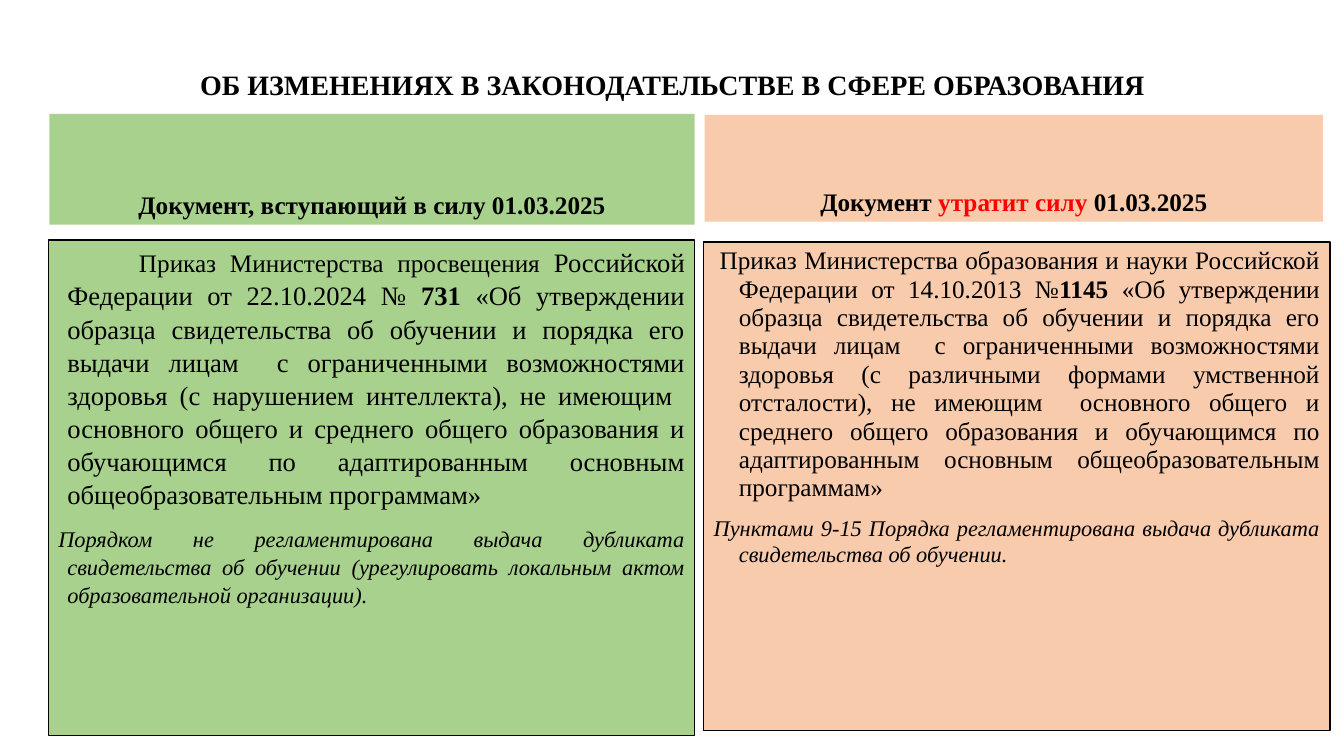
import pptx
import pptx.dml.color
import pptx.enum.shapes
import pptx.enum.text
import pptx.util
from dataclasses import dataclass

Inches, Pt = pptx.util.Inches, pptx.util.Pt
Color = pptx.dml.color.RGBColor.from_string
Align, Anchor = pptx.enum.text.PP_ALIGN, pptx.enum.text.MSO_ANCHOR


@dataclass(frozen=True)
class Theme:
    font: str = "Times New Roman"
    ink: str = "000000"
    alert: str = "FF0000"
    green: str = "A9D18E"
    peach: str = "F8CBAD"
    title: float = 20
    head: float = 18
    large: float = 19
    note: float = 16


THEME = Theme()


def write(para, runs, **style):
    """Fill a paragraph with (text, font values) runs."""
    for name, value in style.items():
        setattr(para, name, value)
    for text, look in runs:
        run = para.add_run()
        run.text = text
        values = {"name": THEME.font, "size": THEME.head, "color": THEME.ink} | look
        run.font.color.rgb = Color(values.pop("color"))
        values["size"] = Pt(values["size"])
        for name, value in values.items():
            setattr(run.font, name, value)


def indent(para, left, first):
    props = para._p.get_or_add_pPr()
    props.set("marL", str(Inches(left)))
    props.set("indent", str(Inches(first)))


def panel(slide, box, fill, anchor, border=False):
    """Draw a filled rectangle and return its text frame."""
    shape = slide.shapes.add_shape(
        pptx.enum.shapes.MSO_SHAPE.RECTANGLE, *map(Inches, box))
    shape.shadow.inherit = False
    shape.fill.solid()
    shape.fill.fore_color.rgb = Color(fill)
    if border:
        shape.line.color.rgb = Color(THEME.ink)
        shape.line.width = Pt(1)
    else:
        shape.line.fill.background()
    frame = shape.text_frame
    frame.word_wrap = True
    frame.vertical_anchor = anchor
    return frame


def title(slide, box, text):
    frame = slide.shapes.add_textbox(*map(Inches, box)).text_frame
    frame.word_wrap = True
    frame.vertical_anchor = Anchor.MIDDLE
    write(frame.paragraphs[0], [(text, {"size": THEME.title, "bold": True})],
          alignment=Align.CENTER, line_spacing=0.9)


def header(slide, box, fill, runs, spacing):
    frame = panel(slide, box, fill, Anchor.BOTTOM)
    write(frame.paragraphs[0], [(text, {"bold": True} | look) for text, look in runs],
          alignment=Align.CENTER, line_spacing=spacing, space_before=Pt(10))


def body(slide, box, fill, order, note, left, firsts, spacing):
    """Place the order and its italic note, each with its own first-line indent."""
    frame = panel(slide, box, fill, Anchor.TOP, border=True)
    paras = [frame.paragraphs[0], frame.add_paragraph()]
    texts = [order, [(note, {"size": THEME.note, "italic": True})]]
    for para, runs, first in zip(paras, texts, firsts):
        write(para, runs, alignment=Align.JUSTIFY, line_spacing=spacing,
              space_before=Pt(10))
        indent(para, left, first)


def order(start, number, kind, size):
    """Build the order's wording around its number and the kind of impairment."""
    look = {"size": size}
    return start + [
        (number, look | {"bold": True}),
        (" «Об утверждении образца свидетельства об обучении и порядка его выдачи "
         f"лицам  с ограниченными возможностями здоровья (с {kind}), не имеющим  "
         "основного общего и среднего общего образования и обучающимся по "
         "адаптированным основным общеобразовательным программам»", look),
    ]


def main():
    deck = pptx.Presentation()
    deck.slide_width, deck.slide_height = Inches(13.33), Inches(7.5)
    slide = deck.slides.add_slide(deck.slide_layouts[6])

    title(slide, (0.92, 0.4, 11.5, 0.91),
          "ОБ ИЗМЕНЕНИЯХ В ЗАКОНОДАТЕЛЬСТВЕ В СФЕРЕ ОБРАЗОВАНИЯ")

    # Document coming into force
    header(slide, (0.49, 1.13, 6.4, 1.1), THEME.green,
           [("Документ, вступающий в силу 01.03.2025", {})], 0.9)
    start = [("Приказ Министерства просвещения ", {}),
             ("Российской Федерации от 22.10.2024 № ", {"size": THEME.large})]
    body(slide, (0.48, 2.38, 6.41, 4.92), THEME.green,
         order(start, "731", "нарушением интеллекта", THEME.large),
         "Порядком не регламентирована выдача дубликата свидетельства об обучении "
         "(урегулировать локальным актом образовательной организации).",
         0.09, (0.71, -0.09), 1.04)

    # Document losing force
    header(slide, (6.99, 1.14, 6.13, 1.06), THEME.peach,
           [("Документ ", {}), ("утратит силу ", {"color": THEME.alert}),
            ("01.03.2025", {})], 1.0)
    start = [("Приказ Министерства образования и науки Российской Федерации "
              "от 14.10.2013 №", {})]
    body(slide, (6.98, 2.4, 6.21, 4.85), THEME.peach,
         order(start, "1145", "различными формами умственной отсталости", THEME.head),
         "Пунктами 9-15 Порядка регламентирована выдача дубликата свидетельства "
         "об обучении.",
         0.25, (-0.19, -0.25), 0.94)

    deck.save("out.pptx")


if __name__ == "__main__":
    main()
